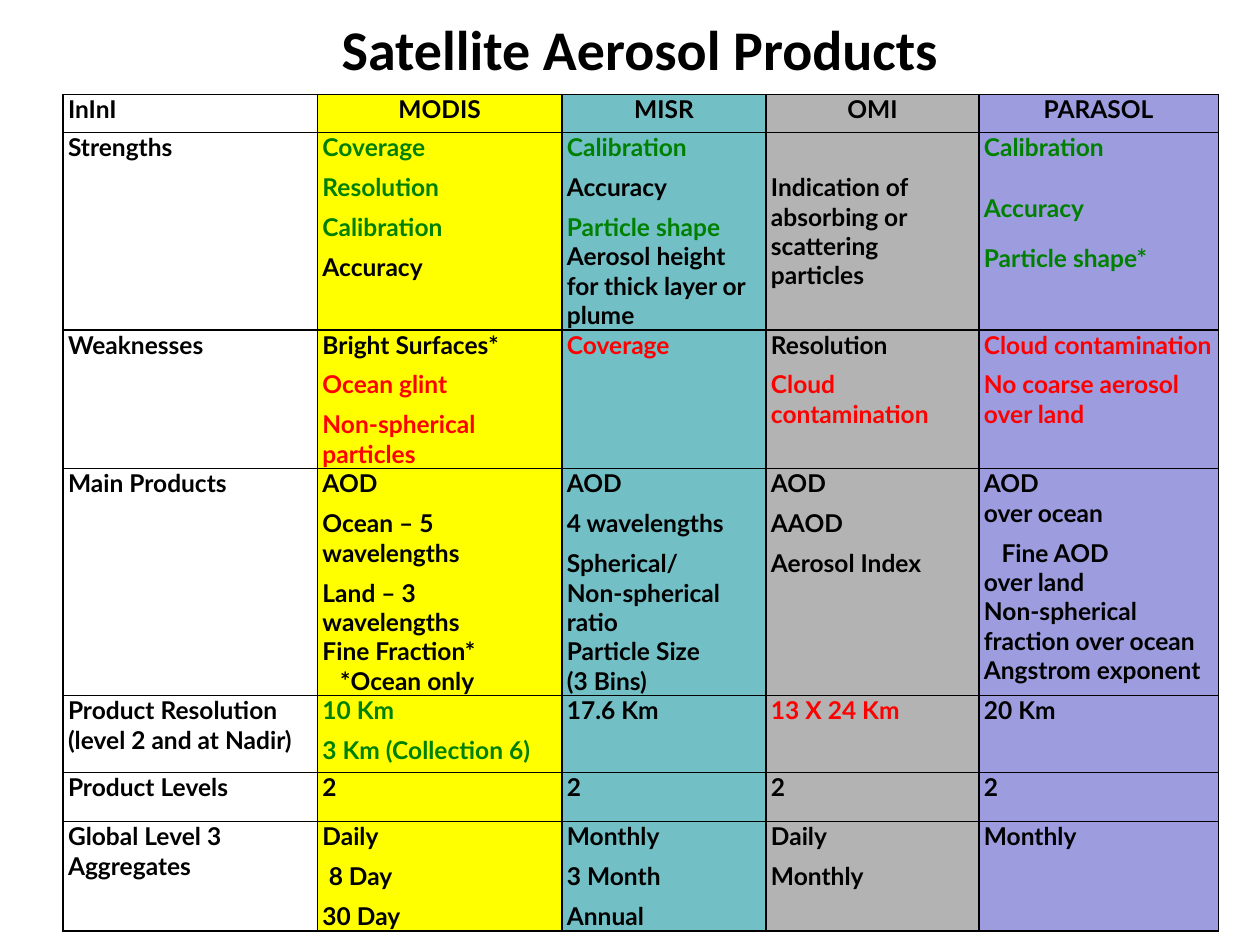
"""Build a slide with a table comparing satellite aerosol products."""
from lxml.etree import SubElement
from pptx import Presentation
from pptx.dml.color import RGBColor
from pptx.enum.text import MSO_ANCHOR, PP_ALIGN
from pptx.oxml.ns import qn
from pptx.util import Inches, Pt

BLACK = RGBColor(0x00, 0x00, 0x00)
GREEN = RGBColor(0x00, 0x80, 0x00)
RED = RGBColor(0xFF, 0x00, 0x00)
WHITE = RGBColor(0xFF, 0xFF, 0xFF)
YELLOW = RGBColor(0xFF, 0xFF, 0x00)
TEAL = RGBColor(0x72, 0xBF, 0xC5)
GRAY = RGBColor(0xB3, 0xB3, 0xB3)
VIOLET = RGBColor(0x9C, 0x9C, 0xDF)

TITLE = "Satellite Aerosol Products"
COLUMNS = [(2.02, WHITE), (1.94, YELLOW), (1.62, TEAL), (1.69, GRAY), (1.9, VIOLET)]
ROW_HEIGHTS = [0.3, 1.5, 1.06, 1.73, 0.61, 0.39, 0.83]
TABLE_LEFT, TABLE_TOP = 0.5, 0.75
DEFAULT_LINE = {"color": BLACK, "before": 6, "indent": 0}
OMI_STRENGTHS = (1, 3)
OMI_TOP_MARGIN = 0.32


def line(text, **changes):
    return {"text": text, **DEFAULT_LINE, **changes}


def lines(*texts, **changes):
    return [line(text, **changes) for text in texts]


ROWS = [
    [lines(name) for name in ("InInI", "MODIS", "MISR", "OMI", "PARASOL")],
    [
        lines("Strengths"),
        lines("Coverage", "Resolution", "Calibration", color=GREEN) + lines("Accuracy"),
        [
            line("Calibration", color=GREEN),
            line("Accuracy"),
            line("Particle shape", color=GREEN),
            line("Aerosol height for thick layer or plume", before=0),
        ],
        lines("Indication of absorbing or scattering particles"),
        [
            line("Calibration", color=GREEN),
            line("Accuracy", color=GREEN, before=18),
            line("Particle shape*", color=GREEN, before=12),
        ],
    ],
    [
        lines("Weaknesses"),
        lines("Bright Surfaces*") + lines("Ocean glint", "Non-spherical particles", color=RED),
        lines("Coverage", color=RED),
        lines("Resolution") + lines("Cloud contamination", color=RED),
        lines("Cloud contamination", "No coarse aerosol over land", color=RED),
    ],
    [
        lines("Main Products"),
        lines("AOD", "Ocean – 5 wavelengths", "Land – 3")
        + lines("wavelengths", "Fine Fraction*", before=0)
        + lines("*Ocean only", before=0, indent=0.14),
        lines("AOD", "4 wavelengths", "Spherical/")
        + lines("Non-spherical ratio", "Particle Size", "(3 Bins)", before=0),
        lines("AOD", "AAOD", "Aerosol Index"),
        lines("AOD")
        + lines("over ocean", before=0)
        + lines("Fine AOD", indent=0.14)
        + lines("over land", "Non-spherical fraction over ocean", "Angstrom exponent", before=0),
    ],
    [
        lines("Product Resolution (level 2 and at Nadir)"),
        lines("10 Km", "3 Km (Collection 6)", color=GREEN),
        lines("17.6 Km"),
        lines("13 X 24 Km", color=RED),
        lines("20 Km"),
    ],
    [lines(text) for text in ("Product Levels", "2", "2", "2", "2")],
    [
        lines("Global Level 3 Aggregates"),
        [line("Daily"), line("8 Day", indent=0.05), line("30 Day")],
        lines("Monthly", "3 Month", "Annual"),
        lines("Daily", "Monthly"),
        lines("Monthly"),
    ],
]


def format_font(font, name, size, color):
    font.name, font.size, font.bold = name, Pt(size), True
    font.color.rgb = color


def add_borders(cell):
    properties = cell._tc.get_or_add_tcPr()
    for side in ("lnL", "lnR", "lnT", "lnB"):
        border = SubElement(properties, qn(f"a:{side}"), w=str(Pt(1)))
        fill = SubElement(border, qn("a:solidFill"))
        SubElement(fill, qn("a:srgbClr"), val=str(BLACK))


def write_cell(cell, content, centered):
    frame = cell.text_frame
    frame.text = "\n".join(item["text"] for item in content)
    for index, (paragraph, item) in enumerate(zip(frame.paragraphs, content)):
        paragraph.alignment = PP_ALIGN.CENTER if centered else PP_ALIGN.LEFT
        paragraph.space_before = Pt(item["before"] if index else 0)
        if item["indent"]:
            paragraph._p.get_or_add_pPr().set("indent", str(Inches(item["indent"])))
        for span in paragraph.runs:
            format_font(span.font, "Lato", 14, item["color"])


def add_title(page):
    title = page.shapes.title
    title.left, title.top = Inches(0.83), Inches(0.05)
    title.width, title.height = Inches(8.5), Inches(0.67)
    frame = title.text_frame
    frame.text = TITLE
    frame.vertical_anchor = MSO_ANCHOR.MIDDLE
    frame.paragraphs[0].alignment = PP_ALIGN.CENTER
    format_font(frame.paragraphs[0].runs[0].font, "Calibri", 32, BLACK)


def add_product_table(page):
    width = sum(column_width for column_width, _ in COLUMNS)
    table = page.shapes.add_table(
        len(ROWS), len(COLUMNS), Inches(TABLE_LEFT), Inches(TABLE_TOP),
        Inches(width), Inches(sum(ROW_HEIGHTS)),
    ).table
    table.first_row = table.horz_banding = False
    for column, (column_width, _) in zip(table.columns, COLUMNS):
        column.width = Inches(column_width)
    for row, height in zip(table.rows, ROW_HEIGHTS):
        row.height = Inches(height)
    for row_index, contents in enumerate(ROWS):
        for column_index, content in enumerate(contents):
            cell = table.cell(row_index, column_index)
            cell.margin_left = cell.margin_right = Inches(0.04)
            cell.margin_top = cell.margin_bottom = 0
            add_borders(cell)
            cell.fill.solid()
            cell.fill.fore_color.rgb = COLUMNS[column_index][1]
            write_cell(cell, content, row_index == 0 and column_index > 0)
    table.cell(*OMI_STRENGTHS).margin_top = Inches(OMI_TOP_MARGIN)


def main():
    deck = Presentation()
    deck.slide_width, deck.slide_height = Inches(10), Inches(7.5)
    page = deck.slides.add_slide(deck.slide_layouts[5])
    add_title(page)
    add_product_table(page)
    deck.save("out.pptx")


if __name__ == "__main__":
    main()
